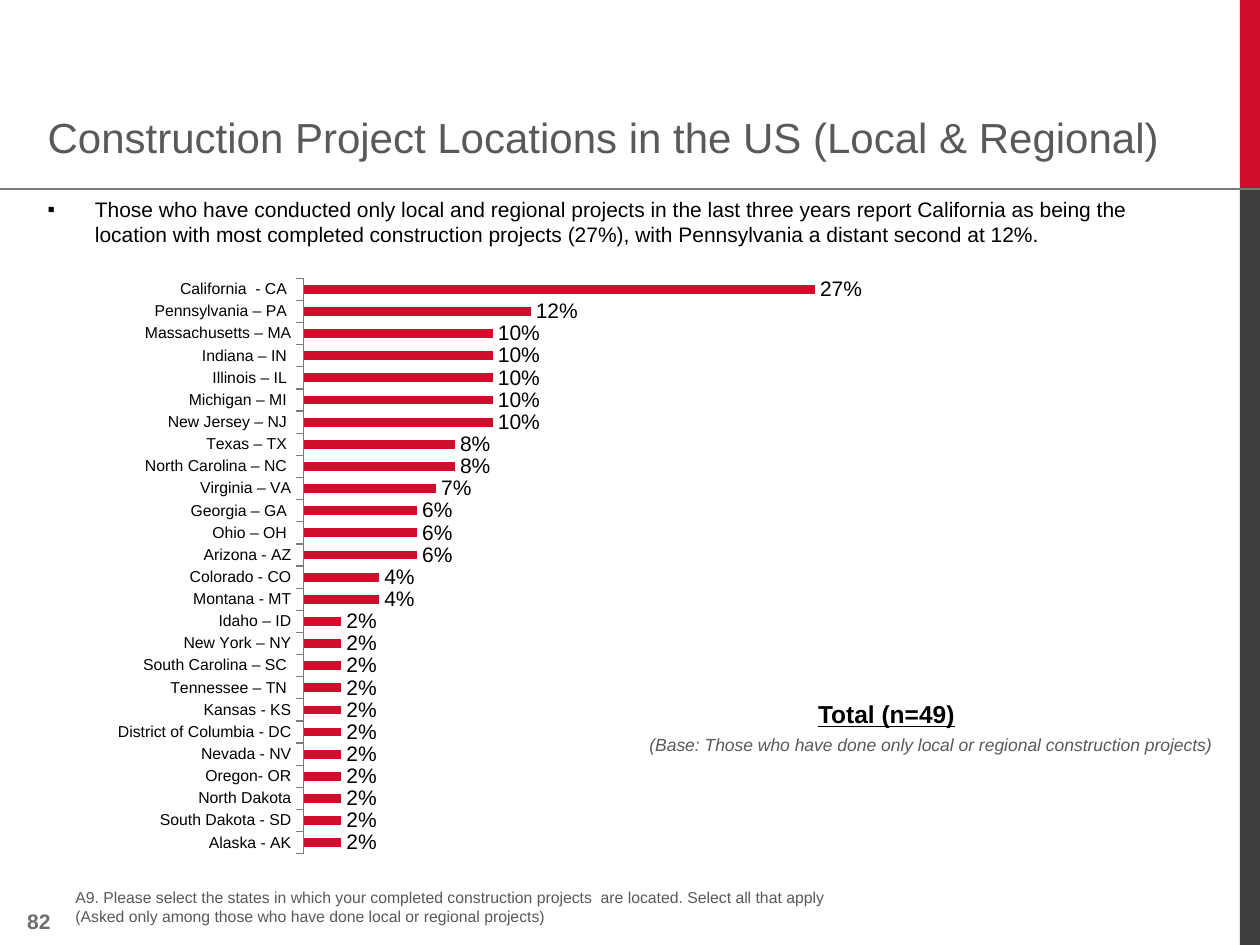
from lxml import etree
from pptx import Presentation
from pptx.chart.data import CategoryChartData
from pptx.dml.color import RGBColor
from pptx.enum import chart as ch, shapes, text
from pptx.oxml.ns import qn
from pptx.util import Pt

RED = RGBColor(0xD0, 0x0D, 0x2D)
DARK = RGBColor(0x3D, 0x3E, 0x3E)
RULE = RGBColor(0x7A, 0x7A, 0x7A)
PAGE = RGBColor(0x6D, 0x6D, 0x6D)
GREY = RGBColor(0x59, 0x59, 0x59)
BLACK = RGBColor(0, 0, 0)

STATES = [
    ("California  - CA ", 27), ("Pennsylvania – PA ", 12),
    ("Massachusetts – MA", 10), ("Indiana – IN ", 10),
    ("Illinois – IL ", 10), ("Michigan – MI ", 10),
    ("New Jersey – NJ ", 10), ("Texas – TX ", 8),
    ("North Carolina – NC ", 8), ("Virginia – VA", 7),
    ("Georgia – GA ", 6), ("Ohio – OH ", 6), ("Arizona - AZ", 6),
    ("Colorado - CO", 4), ("Montana - MT", 4), ("Idaho – ID", 2),
    ("New York – NY", 2), ("South Carolina – SC ", 2),
    ("Tennessee – TN ", 2), ("Kansas - KS", 2),
    ("District of Columbia - DC", 2), ("Nevada - NV", 2),
    ("Oregon- OR", 2), ("North Dakota", 2), ("South Dakota - SD", 2),
    ("Alaska - AK", 2),
]


def style(font, size, color, **more):
    for key, val in dict(name="Arial", size=Pt(size), **more).items():
        setattr(font, key, val)
    font.color.rgb = color


def place(shape, box):
    for key, val in zip(("left", "top", "width", "height"), box):
        setattr(shape, key, Pt(val))


def write(shape, lines, size, color, align=text.PP_ALIGN.LEFT, **more):
    frame = shape.text_frame
    form = dict(word_wrap=True, auto_size=text.MSO_AUTO_SIZE.NONE,
                vertical_anchor=text.MSO_ANCHOR.TOP)
    for key, val in form.items():
        setattr(frame, key, val)
    frame.text = "\n".join(lines)
    for para in frame.paragraphs:
        para.alignment = align
        para.space_before = Pt(0)
        for run in para.runs:
            style(run.font, size, color, **more)


def label(slide, box, *args, **more):
    write(slide.shapes.add_textbox(*map(Pt, box)), *args, **more)


def frame(slide, box):
    left, top, wide, high = box
    split, bar = 108, 11.5
    edge = left + wide - bar
    for y, tall, color in ((top, split, RED),
                           (top + split, high - split, DARK)):
        rect = slide.shapes.add_shape(shapes.MSO_SHAPE.RECTANGLE,
                                      *map(Pt, (edge, y, bar, tall)))
        rect.shadow.inherit = False
        rect.fill.solid()
        rect.fill.fore_color.rgb = color
        rect.line.fill.background()
    line = slide.shapes.add_connector(
        shapes.MSO_CONNECTOR.STRAIGHT,
        *map(Pt, (left + wide, top + split, left, top + split)))
    line.line.color.rgb = RULE
    line.line.width = Pt(1)
    etree.SubElement(line._element.spPr, qn("a:effectLst"))


def header(slide, box):
    left, top, wide, high = box
    title, body = slide.shapes.title, slide.placeholders[1]
    place(title, (left, top, wide - 12, 30))
    write(title, ["Construction Project Locations in the US (Local & Regional)"],
          24, GREY)
    title.text_frame.paragraphs[0].line_spacing = 0.8
    place(body, (left, top + high - 36, wide, 36))
    write(body, ["Those who have conducted only local and regional projects in "
                 "the last three years report California as being the location "
                 "with most completed construction projects (27%), with "
                 "Pennsylvania a distant second at 12%."], 12, BLACK)
    props = body.text_frame.paragraphs[0]._p.get_or_add_pPr()
    props.set("marL", str(Pt(27)))
    props.set("indent", str(Pt(-27)))
    etree.SubElement(props, qn("a:buFont"), typeface="Arial")
    etree.SubElement(props, qn("a:buChar"), char="▪")


def pin(chart, spot):
    plot = chart._chartSpace.chart.plotArea
    old = plot.find(qn("c:layout"))
    if old is not None:
        plot.remove(old)
    lay = etree.Element(qn("c:layout"))
    plot.insert(0, lay)
    man = etree.SubElement(lay, qn("c:manualLayout"))
    tags = [("layoutTarget", "inner"), ("xMode", "edge"), ("yMode", "edge")]
    for tag, val in tags + list(zip("xywh", spot)):
        etree.SubElement(man, qn("c:" + tag), val=str(val))


def bars(slide, box):
    data = CategoryChartData(number_format="0%")
    data.categories = [name for name, _ in STATES]
    data.add_series("Series 1", [val / 100 for _, val in STATES])
    chart = slide.shapes.add_chart(ch.XL_CHART_TYPE.BAR_CLUSTERED,
                                   *map(Pt, box), data).chart
    chart.has_legend = chart.has_title = False
    style(chart.font, 18, BLACK)
    pin(chart, (0.264, 0.023, 0.7, 0.937))

    cat, val = chart.category_axis, chart.value_axis
    cat.reverse_order = True
    cat.has_major_gridlines = val.has_major_gridlines = False
    cat.major_tick_mark = ch.XL_TICK_MARK.OUTSIDE
    cat.format.line.color.rgb = RULE
    style(cat.tick_labels.font, 9, BLACK)
    val.minimum_scale, val.maximum_scale = 0, 0.3
    val.visible = False

    plot = chart.plots[0]
    plot.gap_width = 150
    plot.vary_by_categories = False
    fill = plot.series[0].format.fill
    fill.solid()
    fill.fore_color.rgb = RED
    plot.has_data_labels = True
    tags = plot.data_labels
    form = dict(show_value=True, number_format="0%",
                number_format_is_linked=False,
                position=ch.XL_LABEL_POSITION.OUTSIDE_END)
    for key, item in form.items():
        setattr(tags, key, item)
    style(tags.font, 12, BLACK)


def base(slide, box):
    left, top, wide, high = box
    label(slide, (left + 89, top, 107, 24), ["Total (n=49)"], 14, BLACK,
          text.PP_ALIGN.CENTER, bold=True, underline=True)
    label(slide, (left, top + high - 20, wide, 20),
          ["(Base: Those who have done only local or regional construction "
           "projects)"], 10, GREY, italic=True)


def footer(slide, box):
    left, top, wide, high = box
    label(slide, (left, top + 11.5, 36, 16), ["82"], 12, PAGE,
          text.PP_ALIGN.RIGHT, bold=True)
    label(slide, (left + 36, top, wide - 36, high),
          ["A9. Please select the states in which your completed construction "
           "projects  are located. Select all that apply",
           "(Asked only among those who have done local or regional projects)"],
          9, GREY)


def main():
    deck = Presentation()
    deck.slide_width, deck.slide_height = Pt(720), Pt(540)
    slide = deck.slides.add_slide(deck.slide_layouts[1])
    frame(slide, (0, 0, 720, 540))
    header(slide, (20, 65.5, 670, 79))
    bars(slide, (51, 151, 464, 351))
    base(slide, (364, 396, 350, 40))
    footer(slide, (0, 504, 544, 36))
    deck.save("out.pptx")


if __name__ == "__main__":
    main()
